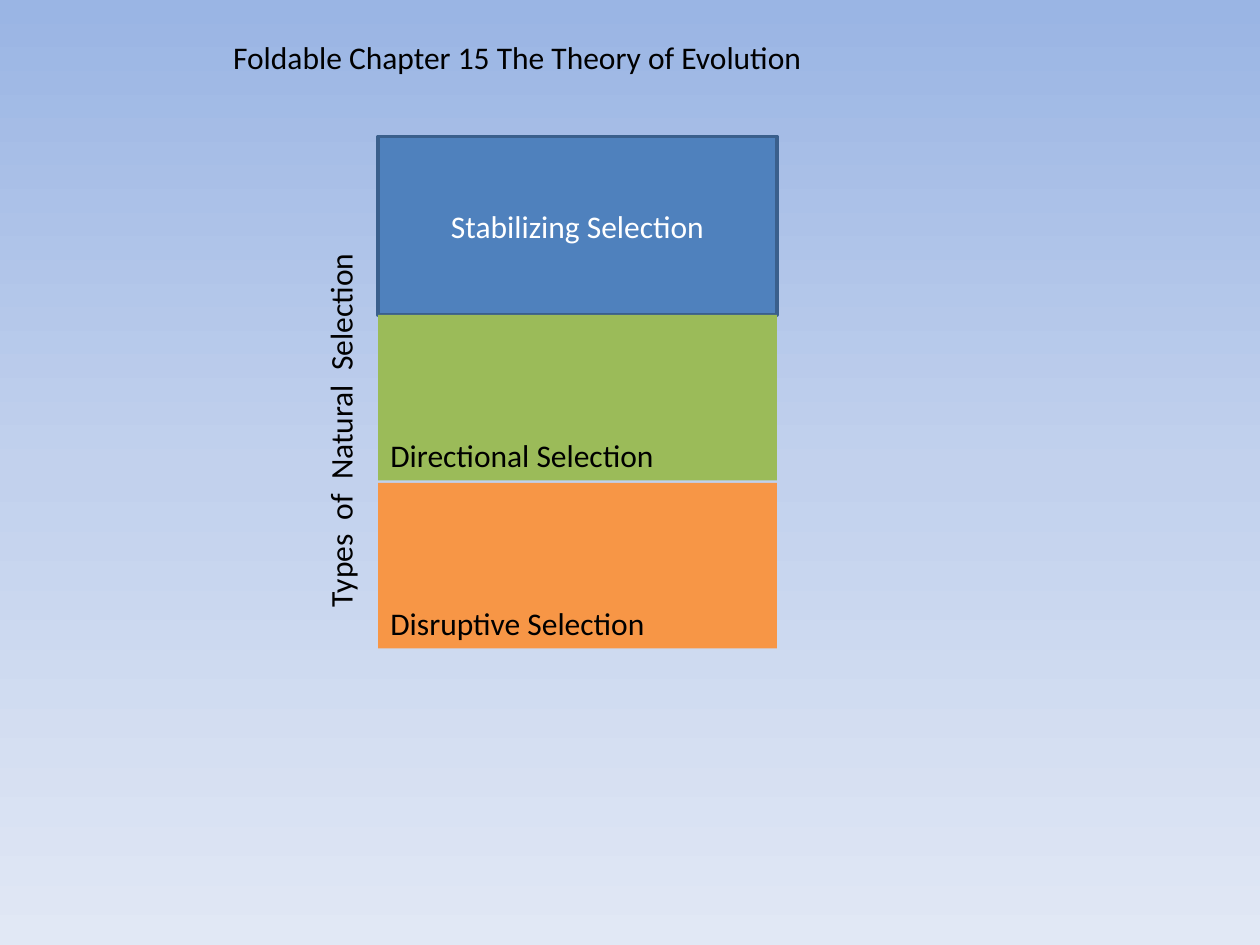
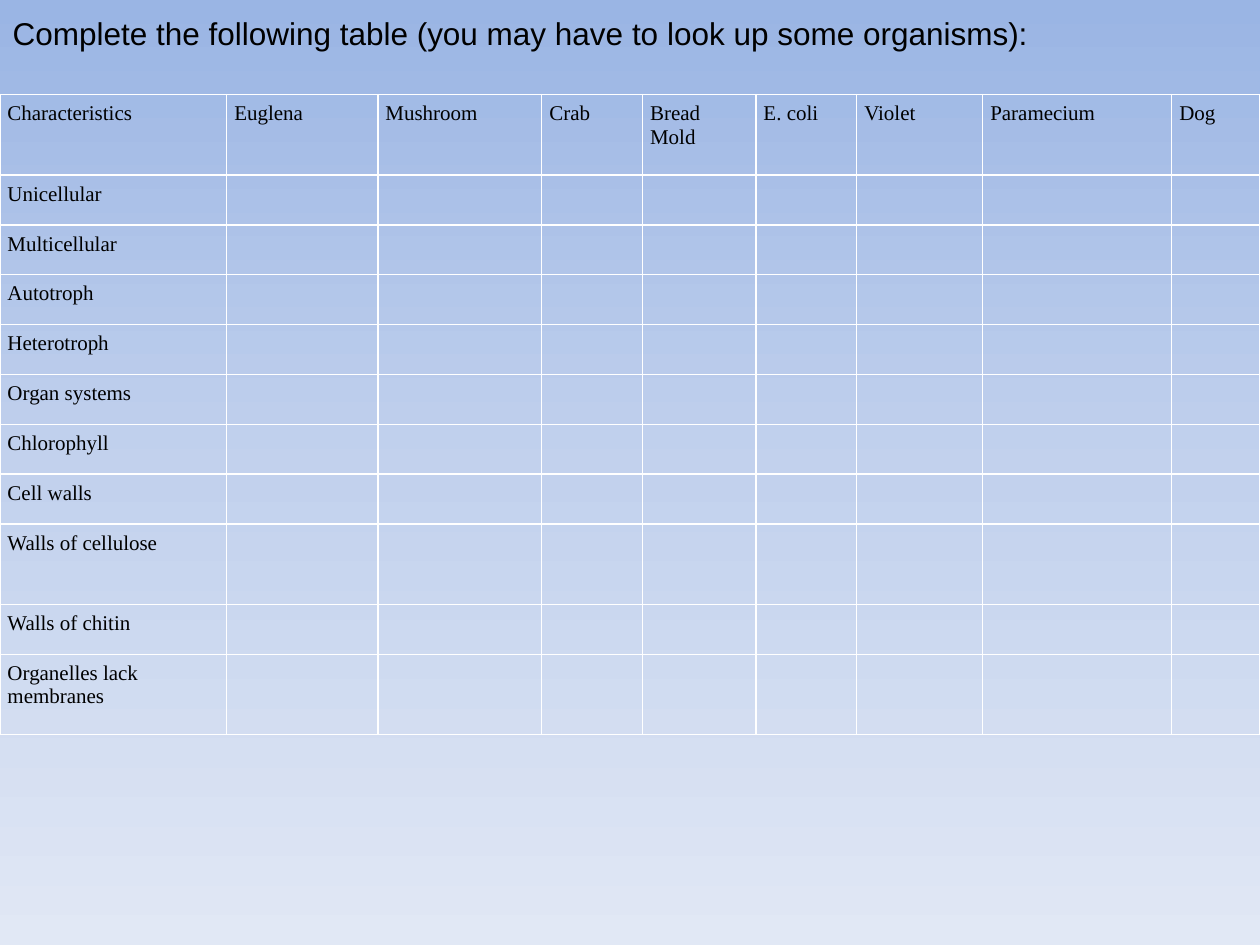
import copy
from dataclasses import dataclass

import pptx
import pptx.dml.color
import pptx.enum.shapes
import pptx.enum.text
import pptx.oxml
import pptx.oxml.ns
import pptx.util
from lxml import etree

Pt = pptx.util.Pt
Anchor = pptx.enum.text.MSO_ANCHOR
Align = pptx.enum.text.PP_ALIGN


def rgb(code):
    return pptx.dml.color.RGBColor.from_string(code)


@dataclass(frozen=True)
class Theme:
    background: tuple = ("9AB5E4", "C2D1ED", "E1E8F5")
    ink: str = "000000"
    light: str = "FFFFFF"
    blue: str = "4F81BD"
    blue_edge: str = "3A5F8C"
    green: str = "9BBB59"
    orange: str = "F79646"
    body_font: str = "Calibri"
    heading_font: str = "Arial"
    table_font: str = "Times New Roman"
    body_size: float = 18
    table_size: float = 12
    table_inset: float = 4.3
    border: float = 0.94


def write(frame, text, *, size, font, color, align=Align.LEFT, anchor=Anchor.TOP, word_gap=0):
    frame.word_wrap = True
    frame.vertical_anchor = anchor
    paragraph = frame.paragraphs[0]
    paragraph.alignment = align
    pieces = text.replace(" ", "\n \n").split("\n") if word_gap else [text]
    for piece in pieces:
        run = paragraph.add_run()
        run.text = piece
        run.font.size = Pt(size)
        run.font.name = font
        run.font.bold = False
        run.font.color.rgb = rgb(color)
        if piece == " ":
            run.font._element.set("spc", str(round(word_gap * 100)))


class Deck:
    def __init__(self, theme):
        self.theme = theme
        self.slide = None
        self.presentation = pptx.Presentation()
        self.presentation.slide_width = Pt(720)
        self.presentation.slide_height = Pt(540)
        self.paint_background()

    def paint_background(self):
        master = self.presentation.slide_master
        fill = master.background.fill
        fill.gradient()
        fill.gradient_angle = 270
        stop_list = master.element.find(".//" + pptx.oxml.ns.qn("a:gsLst"))
        while len(stop_list) > 2:
            stop_list.remove(stop_list[-1])
        stop_list.append(copy.deepcopy(stop_list[-1]))
        for index, (stop, color) in enumerate(zip(fill.gradient_stops, self.theme.background)):
            stop.position = index / 2
            stop.color.rgb = rgb(color)

    def add_slide(self, title, left, top, width, height, **style):
        self.slide = self.presentation.slides.add_slide(self.presentation.slide_layouts[5])
        shape = self.slide.shapes.title
        shape.left, shape.top, shape.width, shape.height = map(Pt, (left, top, width, height))
        shape.text_frame.auto_size = pptx.enum.text.MSO_AUTO_SIZE.NONE
        write(shape.text_frame, title, size=self.theme.body_size, color=self.theme.ink, **style)

    def box(self, text, left, top, width, height, fill, color, edge=None, **style):
        shape = self.slide.shapes.add_shape(
            pptx.enum.shapes.MSO_SHAPE.RECTANGLE, *map(Pt, (left, top, width, height)))
        shape.shadow.inherit = False
        shape.fill.solid()
        shape.fill.fore_color.rgb = rgb(fill)
        if edge:
            shape.line.color.rgb = rgb(edge)
            shape.line.width = Pt(2)
        else:
            shape.line.fill.background()
        write(shape.text_frame, text, size=self.theme.body_size,
              font=self.theme.body_font, color=color, **style)

    def vertical_label(self, text, left, top, width, height, word_gap):
        shape = self.slide.shapes.add_textbox(*map(Pt, (left, top, width, height)))
        write(shape.text_frame, text, size=self.theme.body_size,
              font=self.theme.body_font, color=self.theme.ink, word_gap=word_gap)
        shape.text_frame._txBody.bodyPr.set("vert", "vert270")

    def table(self, rows, left, top, column_widths, row_heights):
        table = self.slide.shapes.add_table(
            len(row_heights), len(column_widths), Pt(left), Pt(top),
            Pt(sum(column_widths)), Pt(sum(row_heights))).table
        table.first_row = False
        table.horz_banding = False
        for column, width in zip(table.columns, column_widths):
            column.width = Pt(width)
        for row, height, texts in zip(table.rows, row_heights, rows):
            row.height = Pt(height)
            padded = texts + [""] * (len(column_widths) - len(texts))
            for cell, text in zip(row.cells, padded):
                self.format_cell(cell, text)

    def format_cell(self, cell, text):
        theme = self.theme
        inset = Pt(theme.table_inset)
        cell.margin_left = cell.margin_right = inset
        cell.margin_top = cell.margin_bottom = inset
        if text:
            write(cell.text_frame, text, size=theme.table_size,
                  font=theme.table_font, color=theme.ink)
        else:
            etree.SubElement(cell.text_frame.paragraphs[0]._p,
                             pptx.oxml.ns.qn("a:endParaRPr"), sz=str(theme.table_size * 100))
        properties = cell._tc.get_or_add_tcPr()
        for side in ("lnL", "lnR", "lnT", "lnB"):
            properties.append(pptx.oxml.parse_xml(
                f'<a:{side} {pptx.oxml.ns.nsdecls("a")} w="{Pt(theme.border)}">'
                f'<a:solidFill><a:srgbClr val="{theme.light}"/></a:solidFill></a:{side}>'))
        cell.fill.background()


def build_foldable(deck):
    theme = deck.theme
    deck.add_slide("Foldable Chapter 15 The Theory of Evolution", 126, 18, 462, 29,
                   font=theme.body_font)
    left, width = 216, 228
    deck.box("Stabilizing Selection", left, 78, width, 102, theme.blue, theme.light,
             edge=theme.blue_edge, align=Align.CENTER, anchor=Anchor.MIDDLE)
    flaps = [("Directional Selection", theme.green), ("Disruptive Selection", theme.orange)]
    for index, (text, color) in enumerate(flaps):
        deck.box(text, left, 180 + 96 * index, width, 94.5, color, theme.ink,
                 anchor=Anchor.BOTTOM)
    deck.vertical_label("Types of Natural Selection", 180, 78, 36, 276, word_gap=4)


def build_organism_table(deck):
    deck.add_slide("Complete the following table (you may have to look up some organisms):",
                   0, 0, 720, 38, font=deck.theme.heading_font, anchor=Anchor.MIDDLE)
    header = ["Characteristics", "Euglena", "Mushroom", "Crab", "Bread Mold",
              "E. coli", "Violet", "Paramecium", "Dog"]
    characteristics = ["Unicellular", "Multicellular", "Autotroph", "Heterotroph",
                       "Organ systems", "Chlorophyll", "Cell walls", "Walls of cellulose",
                       "Walls of chitin", "Organelles lack membranes"]
    rows = [header] + [[name] for name in characteristics]
    tall_rows = {"Characteristics", "Walls of cellulose", "Organelles lack membranes"}
    row_heights = [46 if row[0] in tall_rows else 28.5 for row in rows]
    column_widths = [72 * inches for inches in (1.8, 1.2, 1.3, 0.8, 0.9, 0.8, 1, 1.5, 0.7)]
    deck.table(rows, 0, 54, column_widths, row_heights)


def main():
    deck = Deck(Theme())
    build_foldable(deck)
    build_organism_table(deck)
    deck.presentation.save("out.pptx")


if __name__ == "__main__":
    main()
